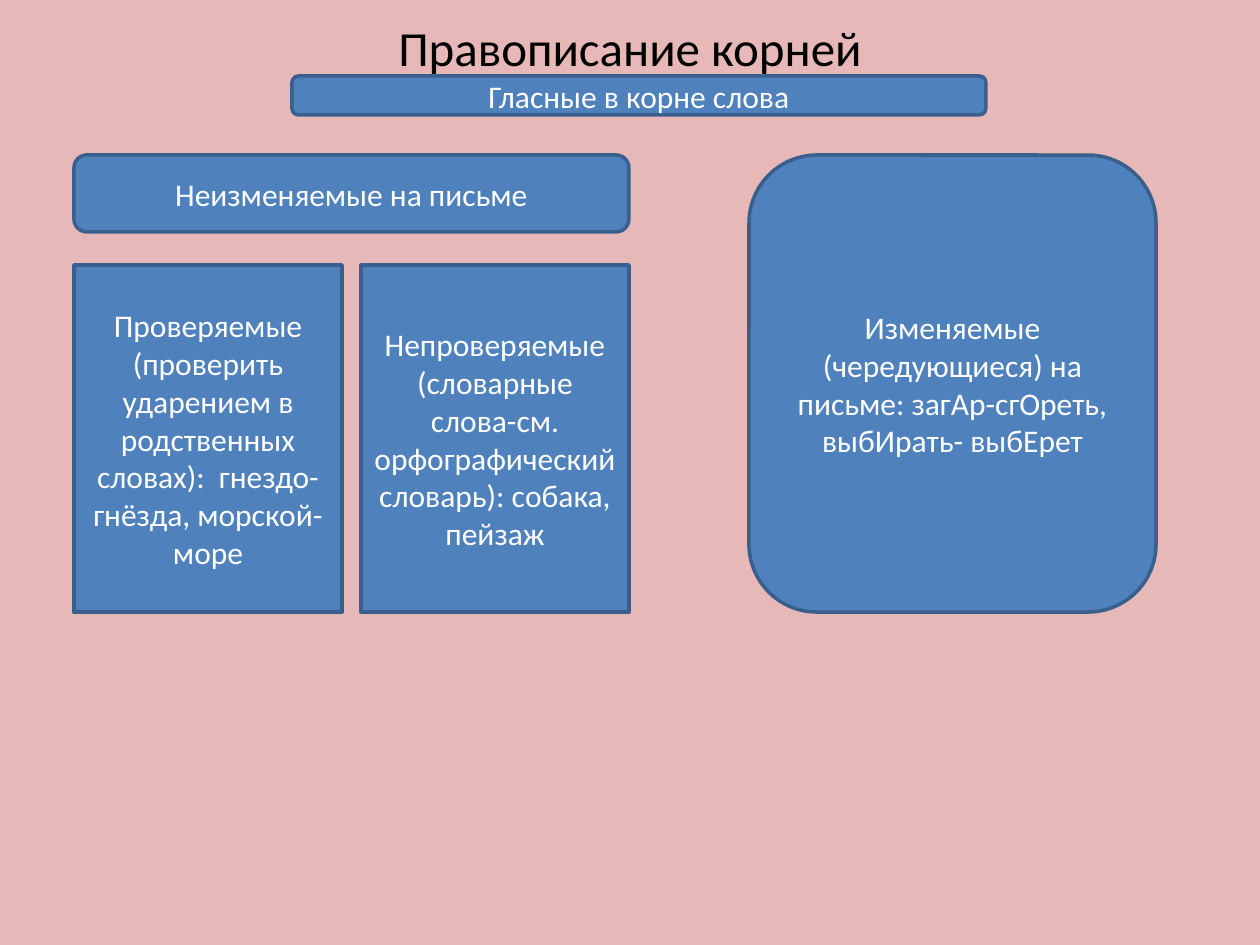
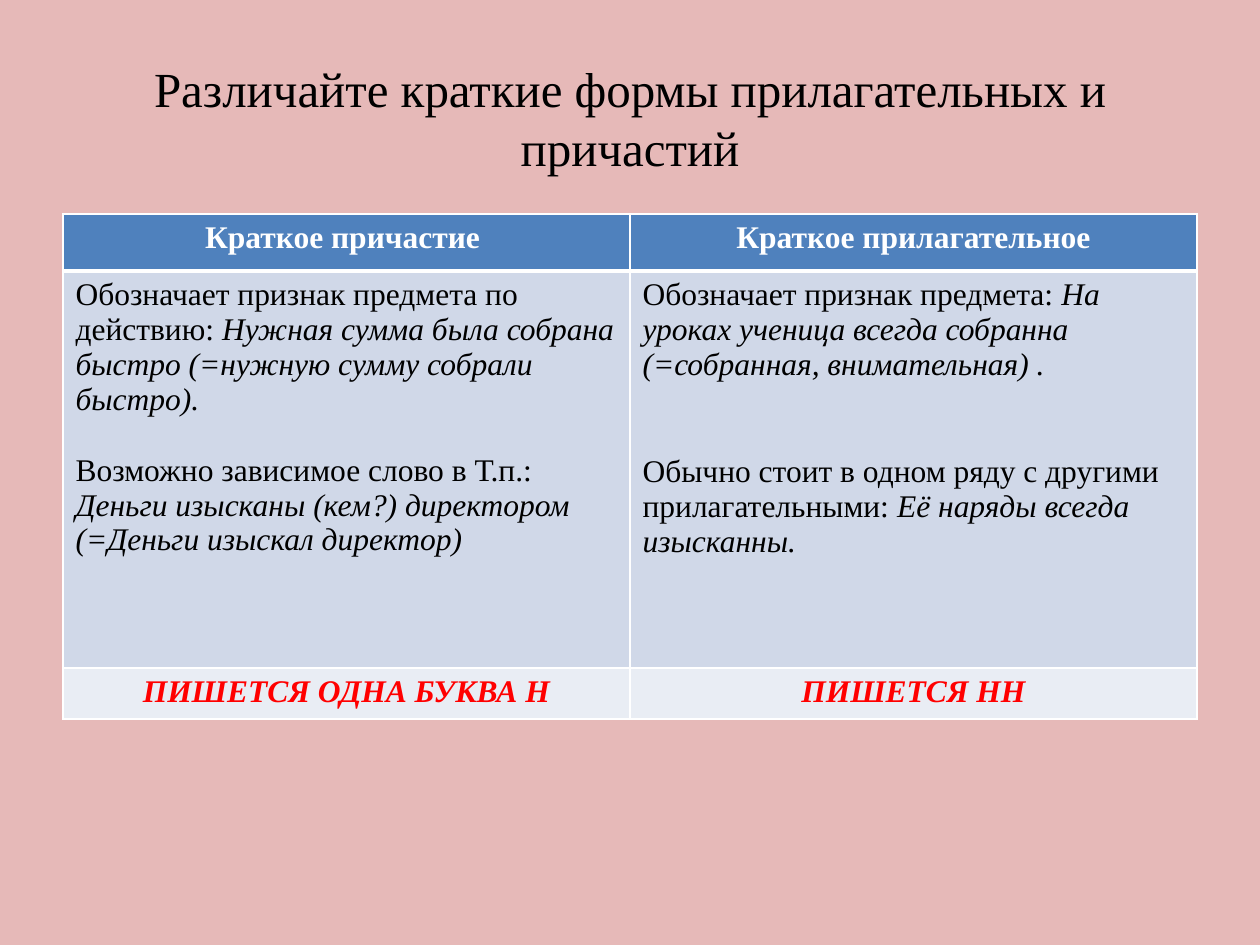
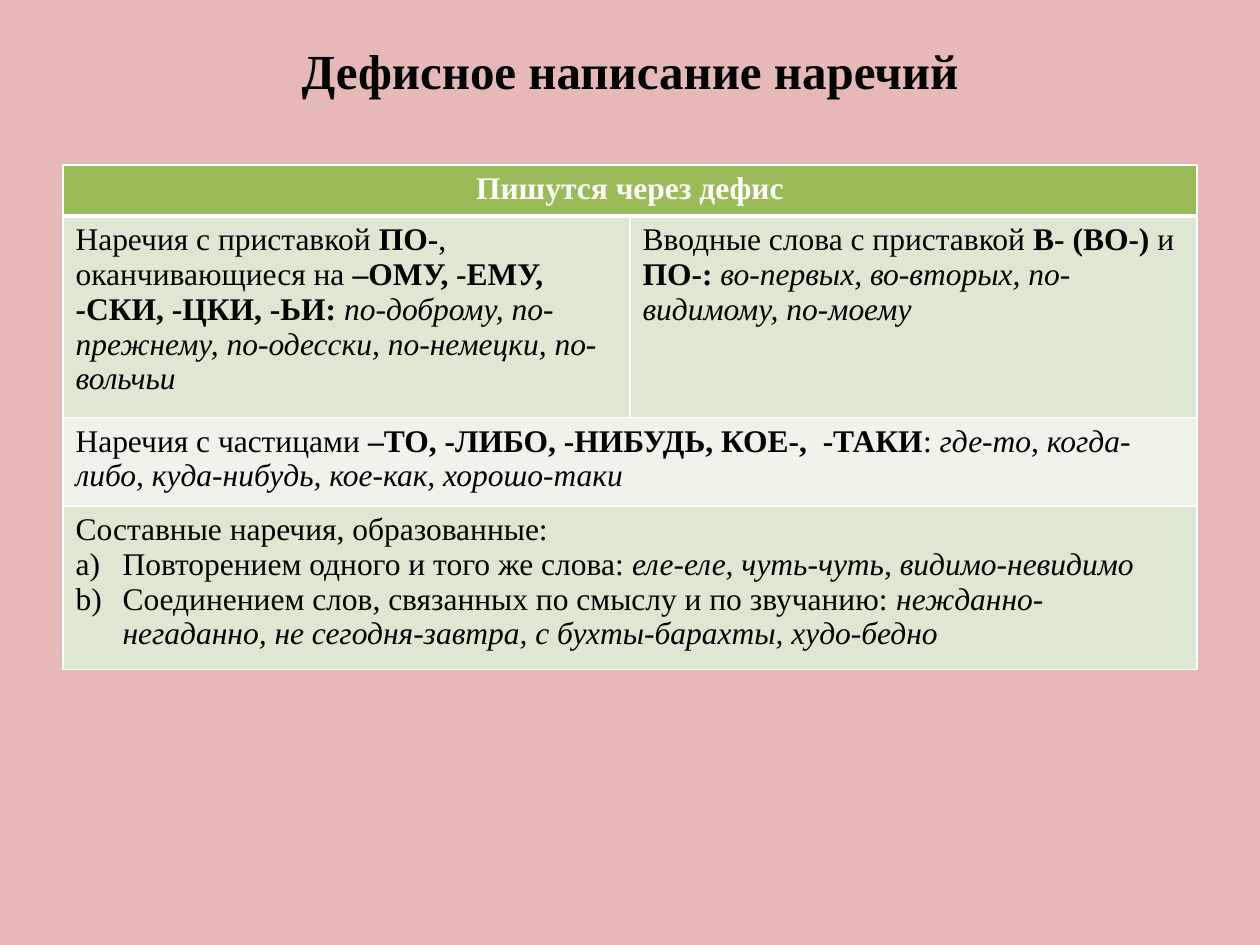
from dataclasses import dataclass

from lxml.etree import SubElement
from pptx import Presentation
from pptx.dml.color import RGBColor as Rgb
from pptx.enum.shapes import MSO_SHAPE as Shape
from pptx.enum.text import MSO_ANCHOR as Anchor, PP_ALIGN as Align
from pptx.oxml.ns import qn
from pptx.util import Emu, Pt

PINK = Rgb(0xE6, 0xB9, 0xB8)
BLUE = Rgb(0x4F, 0x81, 0xBD)
NAVY = Rgb(0x3A, 0x5F, 0x8C)
PALE = Rgb(0xD0, 0xD8, 0xE8)
MIST = Rgb(0xE9, 0xED, 0xF4)
GREEN = Rgb(0x9B, 0xBB, 0x59)
SAGE = Rgb(0xDE, 0xE7, 0xD1)
MILK = Rgb(0xEF, 0xF3, 0xEA)
WHITE = Rgb(0xFF, 0xFF, 0xFF)
BLACK = Rgb(0, 0, 0)
RED = Rgb(0xFF, 0, 0)

SANS, SERIF = "Calibri", "Times New Roman"
BODY, HEAD = 18, 28
LINE = 20.7  # height of one line of body text, in points
LEFT, TOP, WIDE = 63, 38, 1134


def px(n):
    return Emu(round(n * 914400 / 126))


@dataclass
class Para:
    """Runs are (text, style) pairs; the style is "", "b" or "i"."""
    runs: list
    gap: float = 0
    item: bool = False


@dataclass
class Row:
    """One cell in a row spans the whole table."""
    high: int
    fill: Rgb
    cells: list
    ink: Rgb = BLACK
    style: str = ""


def set_font(para, face, size, ink, style=""):
    font = para.font
    font.name, font.size, font.color.rgb = face, Pt(size), ink
    if style:
        font.bold, font.italic = "b" in style, "i" in style
        para.alignment = Align.CENTER


def add_page(deck):
    page = deck.slides.add_slide(deck.slide_layouts[6])
    fill = page.background.fill
    fill.solid()
    fill.fore_color.rgb = PINK
    return page


def add_title(page, text, high, face=SERIF, bold=False, lift=0):
    """Centre the title in its band, with lift px kept free below it."""
    frame = page.shapes.add_textbox(px(LEFT), px(TOP), px(WIDE), px(high)).text_frame
    frame.word_wrap = True
    frame.vertical_anchor = Anchor.MIDDLE
    if lift:
        frame.margin_bottom = px(lift)
    para = frame.paragraphs[0]
    para.text, para.alignment = text, Align.CENTER
    set_font(para, face, HEAD, BLACK)
    para.font.bold = bold


def add_block(page, kind, box, text):
    block = page.shapes.add_shape(kind, *map(px, box))
    block.shadow.inherit = False
    block.fill.solid()
    block.fill.fore_color.rgb = BLUE
    block.line.color.rgb, block.line.width = NAVY, Pt(2)
    frame = block.text_frame
    frame.word_wrap = True
    frame.vertical_anchor = Anchor.MIDDLE
    para = frame.paragraphs[0]
    para.text, para.alignment = text, Align.CENTER
    set_font(para, SANS, BODY, WHITE)


def add_tree(page, x, y, wide, high):
    """Heading on top, a split branch on the left, a whole one on the right."""
    gap, half, side = 19, 268, 407
    left, drop, leaf = 2 * half + gap, 79, 189
    add_block(page, Shape.ROUNDED_RECTANGLE, (x + 218, y, 694, 39),
              "Гласные в корне слова")
    add_block(page, Shape.ROUNDED_RECTANGLE, (x, y + drop, left, 77),
              "Неизменяемые на письме")
    leaves = (
        "Проверяемые (проверить ударением в родственных словах):  "
        "гнездо-гнёзда, морской-море",
        "Непроверяемые (словарные слова-см. орфографический словарь): "
        "собака, пейзаж",
    )
    for i, text in enumerate(leaves):
        add_block(page, Shape.RECTANGLE,
                  (x + i * (half + gap), y + leaf, half, high - leaf), text)
    add_block(page, Shape.ROUNDED_RECTANGLE,
              (x + wide - side, y + drop, side, high - drop),
              "Изменяемые (чередующиеся) на письме: загАр-сгОреть, "
              "выбИрать- выбЕрет")


def set_edges(cell, top, bottom):
    props = cell._tc.get_or_add_tcPr()
    for i, (side, size) in enumerate(zip("LRTB", (1, 1, top, bottom))):
        edge = props.makeelement(qn(f"a:ln{side}"), {"w": str(Pt(size))})
        fill = SubElement(edge, qn("a:solidFill"))
        SubElement(fill, qn("a:srgbClr"), val=str(WHITE))
        props.insert(i, edge)


def set_item(para):
    props = para._p.get_or_add_pPr()
    dent = px(47)
    props.set("marL", str(dent))
    props.set("indent", str(-dent))
    mark = props.makeelement(qn("a:buAutoNum"), {"type": "alphaLcParenR"})
    props.insert_element_before(mark, "a:tabLst", "a:defRPr", "a:extLst")


def fill_cell(cell, row, paras):
    frame = cell.text_frame
    for i, part in enumerate(paras):
        para = frame.add_paragraph() if i else frame.paragraphs[0]
        set_font(para, SERIF, BODY, row.ink, row.style)
        if part.gap:
            para.space_before = Pt(part.gap)
        if part.item:
            set_item(para)
        for text, style in part.runs:
            run = para.add_run()
            run.text = text
            if not row.style:
                run.font.bold, run.font.italic = style == "b", style == "i"


def add_grid(page, y, rows):
    high = sum(row.high for row in rows)
    grid = page.shapes.add_table(len(rows), 2, px(LEFT), px(y), px(WIDE), px(high)).table
    grid.first_row = grid.horz_banding = False
    for r, row in enumerate(rows):
        grid.rows[r].height = px(row.high)
        for cell in grid.rows[r].cells:
            cell.fill.solid()
            cell.fill.fore_color.rgb = row.fill
            set_edges(cell, 3 if r == 1 else 1, 3 if r == 0 else 1)
        if len(row.cells) == 1:
            grid.cell(r, 0).merge(grid.cell(r, 1))
        for c, paras in enumerate(row.cells):
            fill_cell(grid.cell(r, c), row, paras)


def plain(text):
    return [Para([(text, "")])]


def add_roots(deck):
    page = add_page(deck)
    add_title(page, "Правописание корней", 77, SANS, lift=66)
    add_tree(page, 74, 76, 1082, 536)


def add_forms(deck):
    page = add_page(deck)
    add_title(page, "Различайте краткие формы прилагательных и причастий", 158)
    verbal = [
        Para([("Обозначает признак предмета по действию: ", ""),
              ("Нужная сумма была собрана быстро "
               "(=нужную сумму собрали быстро).", "i")]),
        Para([("Возможно зависимое слово в Т.п.:", "")], gap=LINE),
        Para([("Деньги изысканы (кем?) директором "
               "(=Деньги изыскал директор)", "i")]),
    ]
    adjective = [
        Para([("Обозначает признак предмета: ", ""),
              ("На уроках ученица всегда собранна "
               "(=собранная, внимательная) .", "i")]),
        Para([("Обычно стоит в одном ряду с другими прилагательными: ", ""),
              ("Её наряды всегда изысканны.", "i")], gap=2 * LINE),
    ]
    add_grid(page, 214, [
        Row(57, BLUE, [plain("Краткое причастие "),
                       plain("Краткое прилагательное")], WHITE, "b"),
        Row(397, PALE, [verbal, adjective]),
        Row(51, MIST, [plain("ПИШЕТСЯ ОДНА БУКВА Н"),
                       plain("ПИШЕТСЯ НН")], RED, "bi"),
    ])


def add_hyphens(deck):
    page = add_page(deck)
    add_title(page, "Дефисное написание наречий", 63, bold=True)
    adverbs = [Para([
        ("Наречия с приставкой ", ""), ("ПО-", "b"),
        (", оканчивающиеся на ", ""), ("–ОМУ, -ЕМУ, -СКИ, -ЦКИ, -ЬИ: ", "b"),
        ("по-доброму, по-прежнему, по-одесски, по-немецки, по-вольчьи", "i")])]
    asides = [Para([
        ("Вводные слова с приставкой ", ""), ("В- (ВО-) ", "b"),
        ("и ", ""), ("ПО-: ", "b"),
        ("во-первых, во-вторых, по-видимому, по-моему", "i")])]
    particles = [Para([
        ("Наречия с частицами ", ""),
        ("–ТО, -ЛИБО, -НИБУДЬ, КОЕ-,  -ТАКИ", "b"), (": ", ""),
        ("где-то, когда-либо, куда-нибудь, кое-как, хорошо-таки", "i")])]
    compounds = plain("Составные наречия, образованные:") + [
        Para([("Повторением одного и того же слова: ", ""),
              ("еле-еле, чуть-чуть, видимо-невидимо", "i")], item=True),
        Para([("Соединением слов, связанных по смыслу и по звучанию: ", ""),
              ("нежданно-негаданно, не сегодня-завтра, с бухты-барахты, "
               "худо-бедно", "i")], item=True),
    ]
    add_grid(page, 165, [
        Row(51, GREEN, [plain("Пишутся через дефис")], WHITE, "b"),
        Row(187, SAGE, [adverbs, asides]),
        Row(83, MILK, [particles]),
        Row(152, SAGE, [compounds]),
    ])


def main():
    deck = Presentation()
    deck.slide_width, deck.slide_height = px(1260), px(945)
    add_roots(deck)
    add_forms(deck)
    add_hyphens(deck)
    deck.save("out.pptx")


if __name__ == "__main__":
    main()
